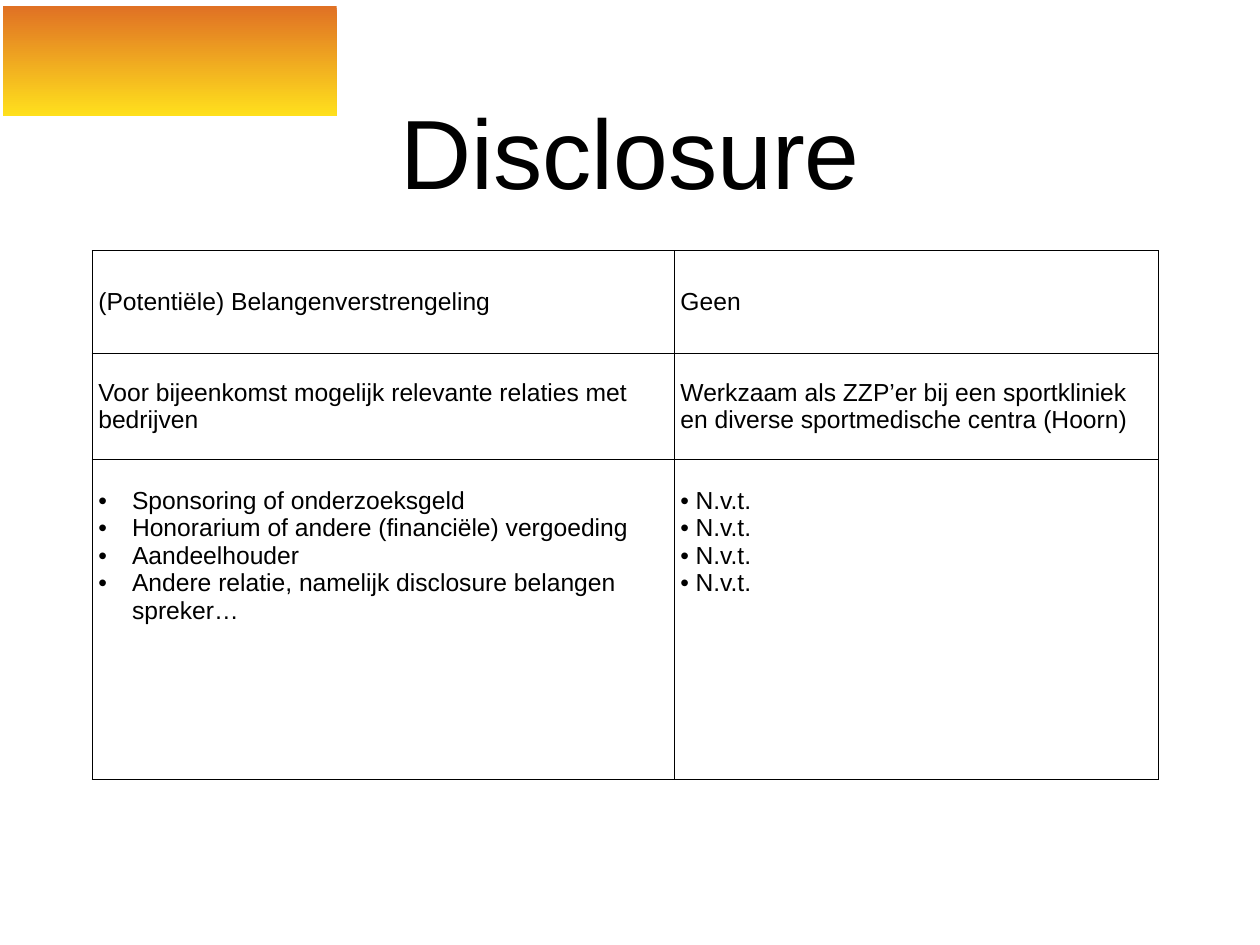
"""Build the disclosure slide: a gradient band, a title and a bordered table."""
from dataclasses import dataclass

from lxml.etree import SubElement
from pptx import Presentation
from pptx.dml.color import RGBColor
from pptx.enum.shapes import MSO_SHAPE
from pptx.enum.text import MSO_ANCHOR, MSO_AUTO_SIZE, PP_ALIGN
from pptx.oxml import parse_xml
from pptx.oxml.ns import nsdecls, qn
from pptx.util import Emu, Pt

RECT = MSO_SHAPE.RECTANGLE
TOP, MIDDLE = MSO_ANCHOR.TOP, MSO_ANCHOR.MIDDLE
CENTER = PP_ALIGN.CENTER
NO_FIT = MSO_AUTO_SIZE.NONE
SCALE = 9144
FACE = "Arial"
BLACK = "000000"
COLS = (657, 546)
ROWS = (116, 120, 361)
PAD = 7
LINE = 31


@dataclass(frozen=True)
class Box:
    left: int
    top: int
    width: int
    height: int


@dataclass(frozen=True)
class Entry:
    lines: tuple[str, ...]
    indent: int = 0


BAND = Box(3, 7, 377, 124)
TITLE = Box(104, 52, 1214, 236)
GRID = Box(104, 283, sum(COLS), sum(ROWS))
ENTRIES = (
    (Entry(("(Potentiële) Belangenverstrengeling",)), Entry(("Geen",))),
    (
        Entry(("Voor bijeenkomst mogelijk relevante relaties met bedrijven",)),
        Entry(("Werkzaam als ZZP’er bij een sportkliniek en "
               "diverse sportmedische centra (Hoorn)",)),
    ),
    (
        Entry(("Sponsoring of onderzoeksgeld",
               "Honorarium of andere (financiële) vergoeding",
               "Aandeelhouder",
               "Andere relatie, namelijk disclosure belangen spreker…"), 38),
        Entry(("N.v.t.",) * 4, 17),
    ),
)


def px(size: int) -> Emu:
    return Emu(size * SCALE)


def area(box: Box) -> tuple[Emu, ...]:
    return px(box.left), px(box.top), px(box.width), px(box.height)


def color(value: str) -> RGBColor:
    return RGBColor.from_string(value)


def style(para, size: int) -> None:
    para.font.name = FACE
    para.font.size = Pt(size)
    para.font.color.rgb = color(BLACK)


def bullet(para, indent: int) -> None:
    props = para._p.get_or_add_pPr()
    props.set("marL", str(px(indent)))
    props.set("indent", str(px(-indent)))
    SubElement(props, qn("a:buFont"), typeface=FACE)
    SubElement(props, qn("a:buChar"), char="•")


def border(cell) -> None:
    props = cell._tc.get_or_add_tcPr()
    for spot, side in enumerate("LRTB"):
        props.insert(spot, parse_xml(
            f'<a:ln{side} {nsdecls("a")} w="{Pt(1)}"><a:solidFill>'
            f'<a:srgbClr val="{BLACK}"/></a:solidFill></a:ln{side}>'))


def write(cell, entry: Entry) -> None:
    cell.fill.background()
    border(cell)
    cell.margin_left = cell.margin_right = px(PAD)
    cell.margin_top = px(LINE if entry.indent else 0)
    cell.margin_bottom = 0
    cell.vertical_anchor = TOP if entry.indent else MIDDLE
    frame = cell.text_frame
    frame.text = "\n".join(entry.lines)
    for para in frame.paragraphs:
        if entry.indent:
            bullet(para, entry.indent)
        style(para, 20)


def draw_title(slide) -> None:
    title = slide.shapes.title
    title.left, title.top, title.width, title.height = area(TITLE)
    frame = title.text_frame
    frame.text = "Disclosure"
    frame.auto_size = NO_FIT
    frame.vertical_anchor = MIDDLE
    frame.margin_left = frame.margin_right = px(6)
    frame.margin_top = frame.margin_bottom = px(6)
    para = frame.paragraphs[0]
    para.alignment = CENTER
    style(para, 80)


def draw_band(slide) -> None:
    band = slide.shapes.add_shape(RECT, *area(BAND))
    band.shadow.inherit = False
    band.line.fill.background()
    band.fill.gradient()
    band.fill.gradient_angle = 270
    for stop, tint in zip(band.fill.gradient_stops, ("E07124", "FFE01D")):
        stop.color.rgb = color(tint)
    slide.shapes.title.element.addprevious(band.element)


def draw_table(slide) -> None:
    table = slide.shapes.add_table(len(ROWS), len(COLS), *area(GRID)).table
    table.first_row = table.horz_banding = False
    for col, width in zip(table.columns, COLS):
        col.width = px(width)
    for row, height, entries in zip(table.rows, ROWS, ENTRIES):
        row.height = px(height)
        for cell, entry in zip(row.cells, entries):
            write(cell, entry)


def main() -> None:
    deck = Presentation()
    deck.slide_width, deck.slide_height = px(1422), px(1067)
    slide = deck.slides.add_slide(deck.slide_layouts[5])
    draw_band(slide)
    draw_title(slide)
    draw_table(slide)
    deck.save("out.pptx")


if __name__ == "__main__":
    main()
